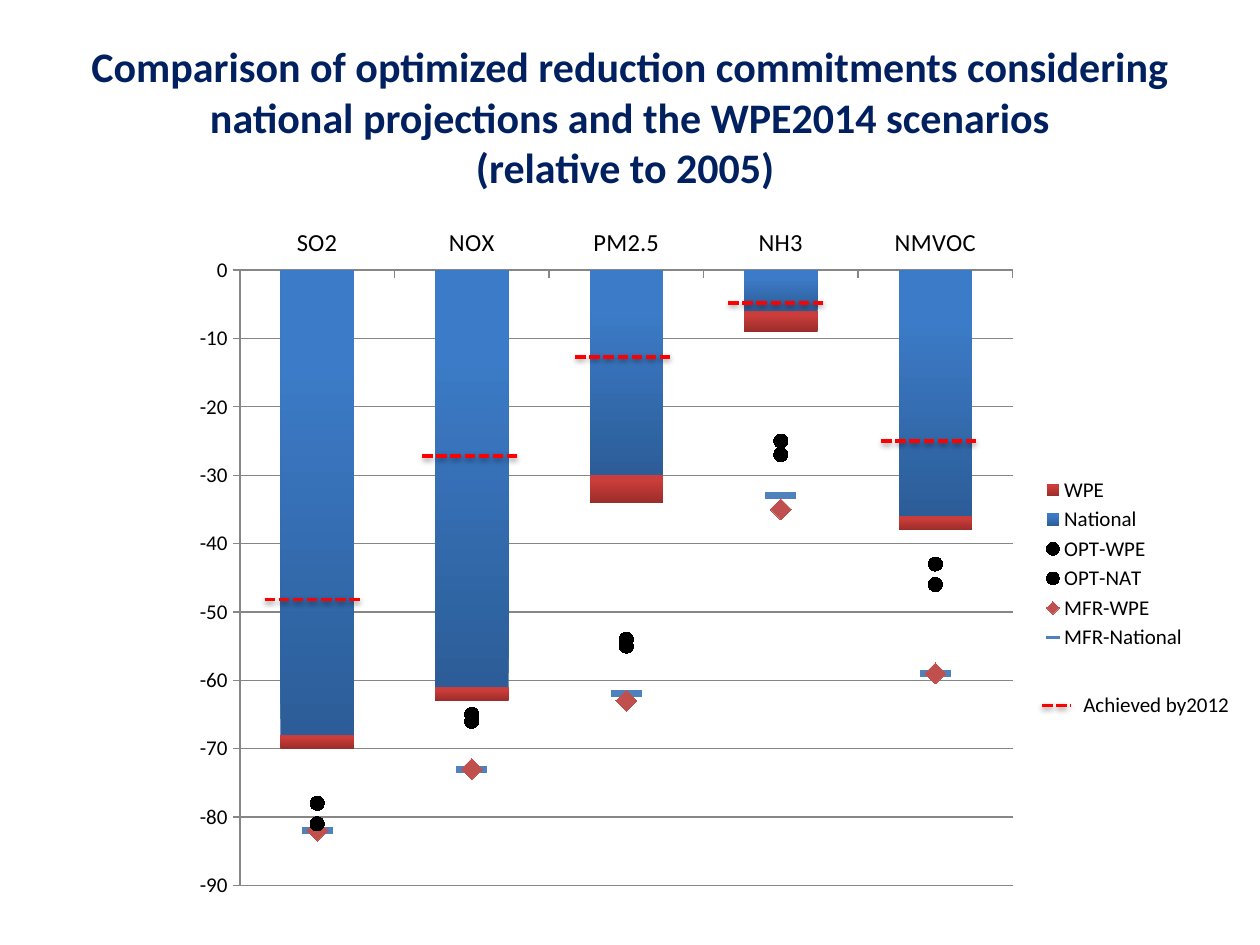
from dataclasses import dataclass

from lxml.etree import SubElement
from pptx import Presentation
from pptx.chart.data import CategoryChartData
from pptx.dml.color import RGBColor
from pptx.enum.chart import XL_CHART_TYPE as ChartType
from pptx.enum.chart import XL_LEGEND_POSITION as LegendPosition
from pptx.enum.chart import XL_MARKER_STYLE as Marker
from pptx.enum.chart import XL_TICK_LABEL_POSITION as LabelPosition
from pptx.enum.chart import XL_TICK_MARK as TickMark
from pptx.enum.dml import MSO_LINE_DASH_STYLE as Dash
from pptx.enum.shapes import MSO_CONNECTOR as Connector
from pptx.enum.text import MSO_ANCHOR as Anchor
from pptx.enum.text import MSO_AUTO_SIZE as AutoSize
from pptx.enum.text import PP_ALIGN as Align
from pptx.oxml import parse_xml
from pptx.oxml.ns import nsdecls, qn
from pptx.util import Inches, Pt


@dataclass(frozen=True)
class Theme:
    font: str = "Calibri"
    title_size: int = 24
    category_size: int = 14
    label_size: int = 12
    title: str = "002060"
    text: str = "000000"
    grid: str = "868686"
    achieved: str = "FF0000"
    blue: str = "4F81BD"
    red: str = "C0504D"


@dataclass(frozen=True)
class Box:
    left: float
    top: float
    width: float
    height: float

    def inches(self):
        return [Inches(v) for v in (self.left, self.top, self.width, self.height)]

    def inner(self, x, y, width, height):
        """A box inside this one, given in shares of its size."""
        return Box(self.left + x * self.width, self.top + y * self.height,
                   width * self.width, height * self.height)


THEME = Theme()
LOWEST = -90
POLLUTANTS = ["SO2", "NOX", "PM2.5", "NH3", "NMVOC"]
# Bars: values, then dark and light gradient colours
BARS = {
    "National": ([-68, -61, -30, -6, -36], "2C5D98", "3C7BC7"),
    "WPE": ([-2, -2, -4, -3, -2], "9B2D2A", "CB3D3A"),
}
# Stacked points: values, then marker shape, size and colour
POINTS = {
    "MFR-National": ([-82, -73, -62, -33, -59], Marker.DASH, 17, THEME.blue),
    "MFR-WPE": ([0, 0, -1, -2, 0], Marker.DIAMOND, 12, THEME.red),
    "OPT-NAT": ([4, 7, 8, 8, 16], Marker.CIRCLE, 8, THEME.text),
    "OPT-WPE": ([-3, 1, 1, 2, -3], Marker.CIRCLE, 8, THEME.text),
}
# Achieved by 2012: start in plot columns, and level on the value axis
ACHIEVED = [(0.16, -48.2), (1.18, -27.2), (2.17, -12.7), (3.16, -4.8), (4.15, -25)]
PLOT_SHARE = (0.06, 0.08, 0.76, 0.88)
LEGEND_SHARE = (0.84, 0.37, 0.16, 0.26)


def rgb(colour):
    return RGBColor.from_string(colour)


def style_font(font, size, colour=THEME.text, bold=False):
    font.name, font.size, font.bold = THEME.font, Pt(size), bold
    font.color.rgb = rgb(colour)


def add_title(page, box, text):
    title = page.shapes.title
    title.left, title.top, title.width, title.height = box.inches()
    frame = title.text_frame
    frame.text = text
    frame.word_wrap = True
    frame.vertical_anchor = Anchor.MIDDLE
    para = frame.paragraphs[0]
    para.alignment = Align.CENTER
    for span in para.runs:
        style_font(span.font, THEME.title_size, THEME.title, True)


def set_layout(parent, share, inner=False):
    """Fix the place of a plot area or legend inside its chart."""
    for old in parent.findall(qn("c:layout")):
        parent.remove(old)
    layout = parse_xml(f"<c:layout {nsdecls('c')}><c:manualLayout/></c:layout>")
    manual = layout[0]
    if inner:
        SubElement(manual, qn("c:layoutTarget"), val="inner")
    for name in ("xMode", "yMode"):
        SubElement(manual, qn(f"c:{name}"), val="edge")
    for name, value in zip("xywh", share):
        SubElement(manual, qn(f"c:{name}"), val=str(value))
    if inner:
        parent.insert(0, layout)
    else:
        parent.find(qn("c:legendPos")).addnext(layout)


def move_points_to_lines(chart):
    """Turn the series after the bars into a stacked line plot on the same axes."""
    bars = chart.element.find(".//" + qn("c:barChart"))
    lines = parse_xml(f'<c:lineChart {nsdecls("c")}><c:grouping val="stacked"/>'
                      '<c:varyColors val="0"/></c:lineChart>')
    for series in bars.findall(qn("c:ser"))[len(BARS):]:
        for flag in series.findall(qn("c:invertIfNegative")):
            series.remove(flag)
        lines.append(series)
    SubElement(lines, qn("c:marker"), val="1")
    for axis in bars.findall(qn("c:axId")):
        SubElement(lines, qn("c:axId"), val=axis.get("val"))
    bars.addnext(lines)


def style_axes(chart):
    for axis, size in ((chart.category_axis, THEME.category_size),
                       (chart.value_axis, THEME.label_size)):
        style_font(axis.tick_labels.font, size)
        axis.major_tick_mark, axis.minor_tick_mark = TickMark.OUTSIDE, TickMark.NONE
        axis.format.line.color.rgb = rgb(THEME.grid)
    chart.category_axis.tick_label_position = LabelPosition.HIGH
    values = chart.value_axis
    values.minimum_scale, values.maximum_scale, values.major_unit = LOWEST, 0, 10
    values.has_major_gridlines = True
    values.major_gridlines.format.line.color.rgb = rgb(THEME.grid)


def add_reduction_chart(page, box):
    data = CategoryChartData()
    data.categories = POLLUTANTS
    for name, (values, *_) in (BARS | POINTS).items():
        data.add_series(name, values)
    chart = page.shapes.add_chart(ChartType.COLUMN_STACKED, *box.inches(), data).chart
    style_font(chart.font, 10)
    chart.has_title = False
    move_points_to_lines(chart)
    bars, points = chart.plots
    bars.gap_width, bars.overlap, bars.vary_by_categories = 110, 100, False

    for series, (_, dark, light) in zip(bars.series, BARS.values()):
        series.invert_if_negative = False
        fill = series.format.fill
        fill.gradient()
        fill.gradient_angle = 90
        for stop, colour, position in zip(fill.gradient_stops, (dark, light), (0, 0.8)):
            stop.color.rgb, stop.position = rgb(colour), position
    for series, (_, shape, size, colour) in zip(points.series, POINTS.values()):
        series.smooth = False
        series.format.line.fill.background()
        marker = series.marker
        marker.style, marker.size = shape, size
        marker.format.fill.solid()
        marker.format.fill.fore_color.rgb = rgb(colour)
        marker.format.line.fill.background()

    style_axes(chart)
    chart.has_legend = True
    legend = chart.legend
    legend.position, legend.include_in_layout = LegendPosition.RIGHT, False
    style_font(legend.font, THEME.label_size)
    set_layout(chart.element.find(".//" + qn("c:legend")), LEGEND_SHARE)
    set_layout(chart.element.find(".//" + qn("c:plotArea")), PLOT_SHARE, True)


def add_dashed_line(page, left, y, width):
    line = page.shapes.add_connector(Connector.STRAIGHT, Inches(left), Inches(y),
                                     Inches(left + width), Inches(y))
    line.line.color.rgb, line.line.width = rgb(THEME.achieved), Pt(2)
    line.line.dash_style = Dash.SQUARE_DOT
    line.element.spPr.append(parse_xml(
        f'<a:effectLst {nsdecls("a")}><a:outerShdw blurRad="40000" dist="20000" '
        'dir="5400000" rotWithShape="0"><a:srgbClr val="000000">'
        '<a:alpha val="38000"/></a:srgbClr></a:outerShdw></a:effectLst>'))


def add_achieved_levels(page, plot):
    column = plot.width / len(POLLUTANTS)
    for start, level in ACHIEVED:
        add_dashed_line(page, plot.left + start * column,
                        plot.top + level / LOWEST * plot.height, 0.78)


def add_achieved_key(page, box):
    sample = 0.23
    add_dashed_line(page, box.left, box.top + 0.53 * box.height, sample)
    label = page.shapes.add_textbox(*Box(box.left + sample, box.top,
                                         box.width - sample, box.height).inches())
    frame = label.text_frame
    frame.text = "Achieved by2012"
    frame.word_wrap = False
    frame.auto_size = AutoSize.SHAPE_TO_FIT_TEXT
    style_font(frame.paragraphs[0].runs[0].font, THEME.label_size)


def main():
    deck = Presentation()
    deck.slide_width, deck.slide_height = Inches(10), Inches(7.5)
    page = deck.slides.add_slide(deck.slide_layouts[5])
    chart_box = Box(1.42, 1.7, 8.07, 5.55)
    add_title(page, Box(0.5, 0.3, 9, 1.25),
              "Comparison of optimized reduction commitments considering national "
              "projections and the WPE2014 scenarios\v(relative to 2005) ")
    add_reduction_chart(page, chart_box)
    add_achieved_levels(page, chart_box.inner(*PLOT_SHARE))
    add_achieved_key(page, Box(8.27, 5.44, 1.6, 0.3))
    deck.save("out.pptx")


if __name__ == "__main__":
    main()
